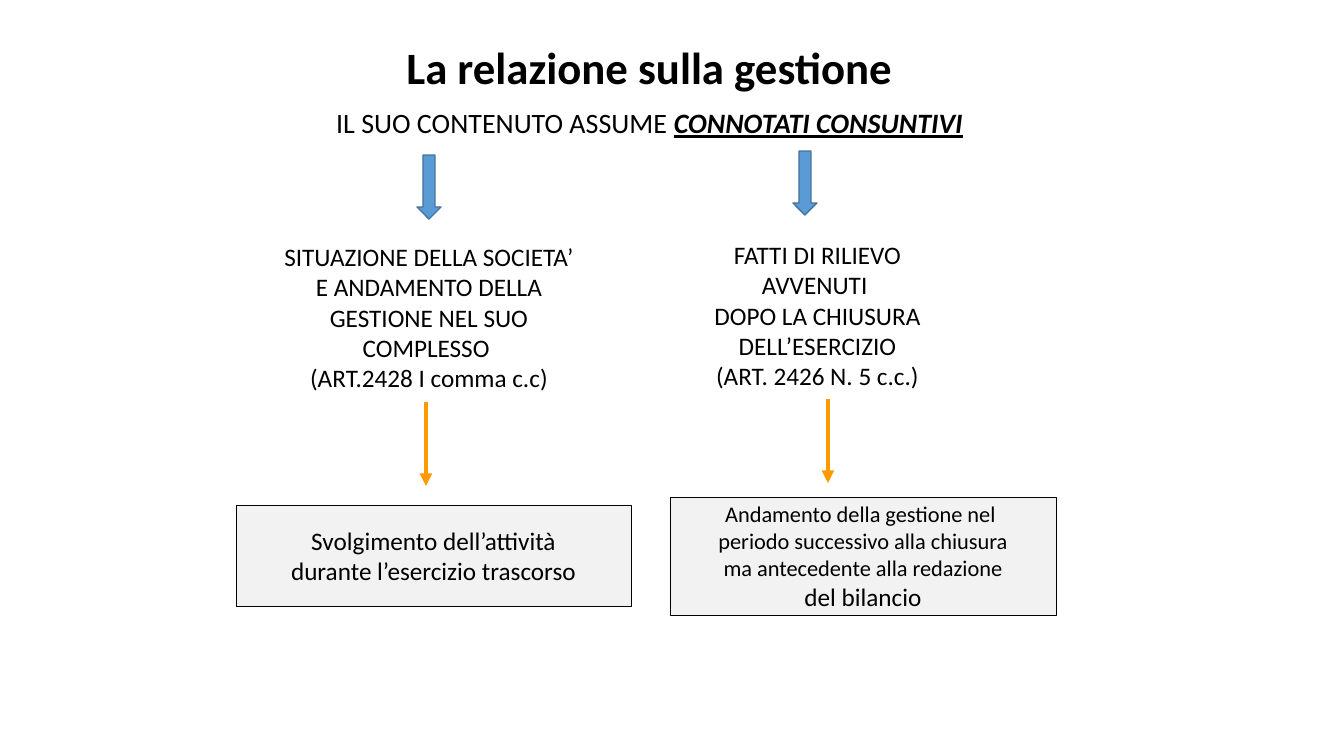
from lxml import etree
from pptx import Presentation
from pptx.dml.color import RGBColor
from pptx.enum.shapes import MSO_CONNECTOR, MSO_SHAPE
from pptx.enum.text import MSO_ANCHOR, MSO_AUTO_SIZE, PP_ALIGN
from pptx.oxml.ns import qn
from pptx.util import Emu, Pt

RECTANGLE = MSO_SHAPE.RECTANGLE
DOWN_ARROW = MSO_SHAPE.DOWN_ARROW
STRAIGHT = MSO_CONNECTOR.STRAIGHT
TOP = MSO_ANCHOR.TOP
MIDDLE = MSO_ANCHOR.MIDDLE
CENTER = PP_ALIGN.CENTER
NO_AUTOFIT = MSO_AUTO_SIZE.NONE

BLACK = RGBColor(0x00, 0x00, 0x00)
LIGHT_GREY = RGBColor(0xF2, 0xF2, 0xF2)
ORANGE = RGBColor(0xFF, 0x99, 0x00)
BLUE = RGBColor(0x5B, 0x9B, 0xD5)
DARK_BLUE = RGBColor(0x43, 0x73, 0x9E)

FONT = "Calibri"
EMU_PER_PX = 914400 / 100.8
SLIDE_WIDTH, SLIDE_HEIGHT = 1344, 756
TITLE_ONLY = 5


def px(length):
    return Emu(round(length * EMU_PER_PX))


class SlideBuilder:
    def __init__(self, slide):
        self.shapes = slide.shapes

    def add_span(self, para, text, size, emphasis=False):
        """Add a run; emphasis means bold, italic and underlined."""
        span = para.add_run()
        span.text = text
        font = span.font
        font.name = FONT
        font.size = Pt(size)
        font.color.rgb = BLACK
        if emphasis:
            font.bold = font.italic = font.underline = True

    def set_lines(self, shape, lines, anchor=MIDDLE, wrap=False):
        """Fill a shape with centred lines, each a list of add_span arguments."""
        frame = shape.text_frame
        frame.auto_size = NO_AUTOFIT
        frame.word_wrap = wrap
        frame.vertical_anchor = anchor
        for index, line in enumerate(lines):
            para = frame.add_paragraph() if index else frame.paragraphs[0]
            para.alignment = CENTER
            for span in line:
                self.add_span(para, *span)

    def title(self, place, text, size):
        title = self.shapes.title
        title.left, title.top, title.width, title.height = map(px, place)
        self.set_lines(title, [[(text, size)]], wrap=True)
        title.text_frame.paragraphs[0].runs[0].font.bold = True

    def text(self, place, lines, anchor=MIDDLE, wrap=False):
        box = self.shapes.add_textbox(*map(px, place))
        self.set_lines(box, lines, anchor, wrap)

    def shape(self, kind, place, fill, outline, outline_width):
        shape = self.shapes.add_shape(kind, *map(px, place))
        shape.shadow.inherit = False
        shape.fill.solid()
        shape.fill.fore_color.rgb = fill
        shape.line.color.rgb = outline
        shape.line.width = Pt(outline_width)
        return shape

    def outcome_box(self, place, lines):
        box = self.shape(RECTANGLE, place, LIGHT_GREY, BLACK, 0.5)
        self.set_lines(box, lines)

    def block_arrow(self, left, top):
        self.shape(DOWN_ARROW, (left, top, 24, 64), BLUE, DARK_BLUE, 1)

    def line_arrow(self, x, top):
        arrow = self.shapes.add_connector(
            STRAIGHT, px(x), px(top), px(x), px(top + 84))
        arrow.line.color.rgb = ORANGE
        arrow.line.width = Pt(3)
        properties = arrow.element.spPr
        etree.SubElement(properties.find(qn("a:ln")), qn("a:tailEnd"), type="triangle")
        etree.SubElement(properties, qn("a:effectLst"))


def plain_lines(texts, size):
    return [[(text, size)] for text in texts]


def main():
    deck = Presentation()
    deck.slide_width, deck.slide_height = px(SLIDE_WIDTH), px(SLIDE_HEIGHT)
    builder = SlideBuilder(deck.slides.add_slide(deck.slide_layouts[TITLE_ONLY]))

    builder.title((196, 44, 907, 46), "La relazione sulla gestione", 32)
    builder.text((196, 101, 907, 588), [[
        ("IL SUO CONTENUTO ASSUME ", 20),
        ("CONNOTATI CONSUNTIVI", 20, True),
    ]], TOP, True)

    builder.text((244, 229, 370, 176), plain_lines([
        "SITUAZIONE DELLA SOCIETA’",
        " E ANDAMENTO DELLA ",
        "GESTIONE NEL SUO",
        "COMPLESSO ",
        "(ART.2428 I comma c.c)",
    ], 18))
    builder.text((620, 223, 395, 184), plain_lines([
        "FATTI DI RILIEVO",
        "AVVENUTI ",
        "DOPO LA CHIUSURA",
        "DELL’ESERCIZIO",
        "(ART. 2426 N. 5 c.c.)",
    ], 18))

    builder.outcome_box((236, 505, 395, 101), plain_lines([
        "Svolgimento dell’attività",
        "durante l’esercizio trascorso",
    ], 18))
    builder.outcome_box((670, 497, 386, 118), plain_lines([
        "Andamento della gestione nel ",
        "periodo successivo alla chiusura",
        "ma antecedente alla redazione",
    ], 16) + plain_lines(["del bilancio"], 18))

    for x, top in ((426, 402), (828, 399)):
        builder.line_arrow(x, top)
    for left, top in ((417, 155), (793, 151)):
        builder.block_arrow(left, top)

    deck.save("out.pptx")


if __name__ == "__main__":
    main()
